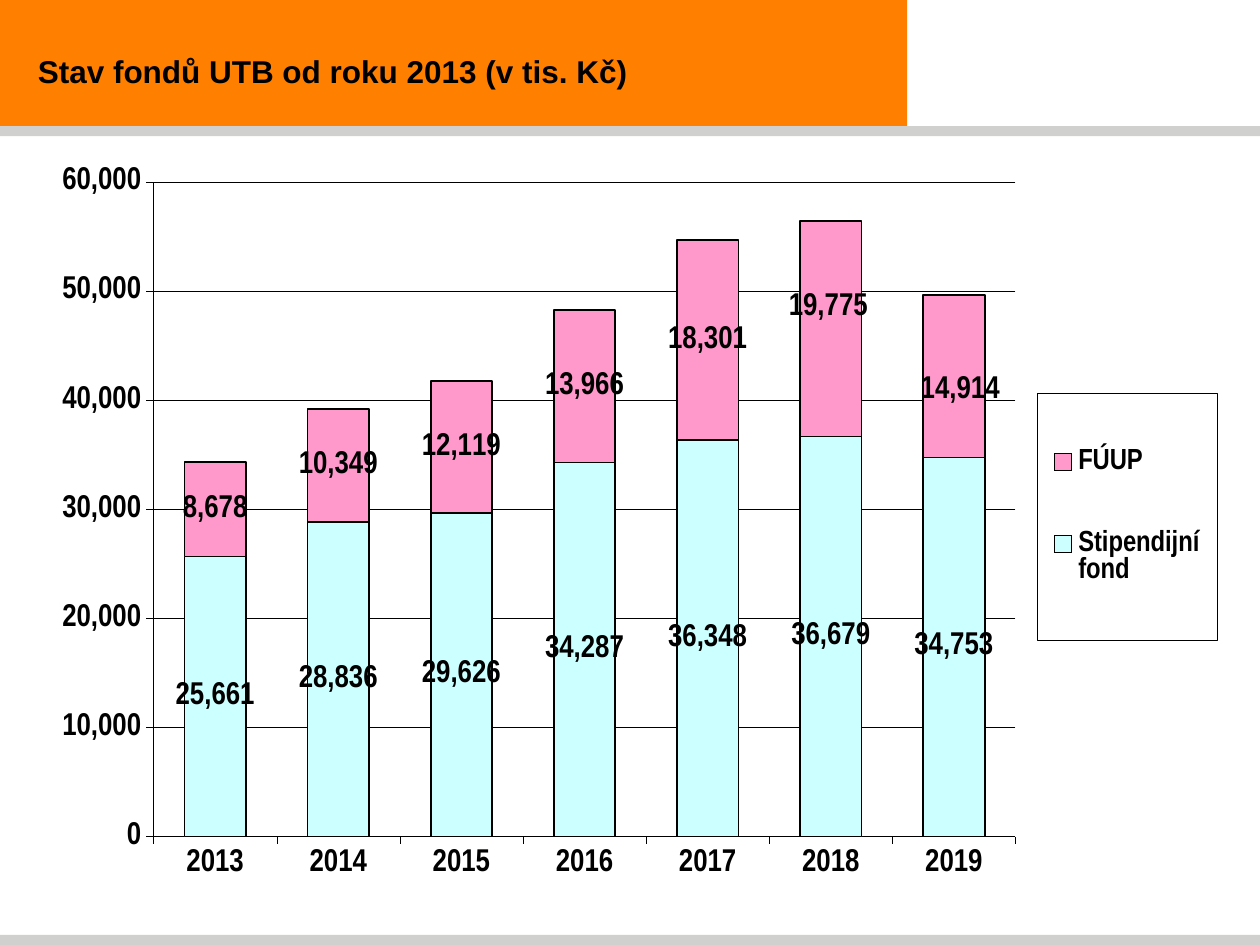
from lxml import etree
from pptx import Presentation
from pptx.chart import data
from pptx.dml import color
from pptx.enum import chart as ch, shapes, text
from pptx.oxml import ns
from pptx.util import Inches, Pt

FACE = {"name": "Arial Narrow", "size": Pt(18), "bold": True}
YEARS = [str(year) for year in range(2013, 2020)]
FUNDS = [
    ("Stipendijní fond", "CCFFFF",
     (25661, 28836, 29626, 34287, 36348, 36679, 34753)),
    ("FÚUP", "FF99CC",
     (8678, 10349, 12119, 13966, 18301, 19775, 14914)),
]
SHIFTS = {5: (-0.02, -0.17), 6: (0.05, 0.12)}


def put(obj, vals):
    """Set each named value on an object."""
    for key, val in vals.items():
        setattr(obj, key, val)


def paint(part, tone):
    """Give a fill, line or font its solid colour."""
    if hasattr(part, "solid"):
        part.solid()
        part.fore_color.rgb = color.RGBColor.from_string(tone)
    else:
        part.color.rgb = color.RGBColor.from_string(tone)


def style(font, **more):
    """Apply the chart face in black."""
    put(font, {**FACE, **more})
    paint(font, "000000")


def stroke(line, width):
    """Draw a black line of a width in points."""
    paint(line, "000000")
    line.width = Pt(width)


def node(root, tag, **attrs):
    """Add a chart element below a root."""
    return etree.SubElement(root, ns.qn("c:" + tag), attrs)


def arrange(host, spot, modes, vals):
    """Insert a manual layout as the child at a given spot."""
    for old in host.findall(ns.qn("c:layout")):
        host.remove(old)
    lay = etree.Element(ns.qn("c:layout"))
    man = node(lay, "manualLayout")
    for tag, val in modes + list(zip("xywh", vals)):
        node(man, tag, val=str(val))
    host.insert(spot, lay)


def share(box, part):
    """Turn a slide box into fractions of an outer box."""
    left, top, wide, high = box
    return ((part[0] - left) / wide, (part[1] - top) / high,
            part[2] / wide, part[3] / high)


def add_band(slide, box, tone):
    """Add a plain coloured band."""
    band = slide.shapes.add_shape(
        shapes.MSO_SHAPE.RECTANGLE, *map(Inches, box))
    band.shadow.inherit = False
    paint(band.fill, tone)
    band.line.fill.background()


def add_head(slide, box):
    """Place the title over the bands."""
    title = slide.shapes.title
    put(title, dict(zip(("left", "top", "width", "height"), map(Inches, box))))
    frame = title.text_frame
    frame.text = "Stav fondů UTB od roku 2013 (v tis. Kč)"
    put(frame, {"margin_left": Inches(0.3), "word_wrap": True,
                "auto_size": text.MSO_AUTO_SIZE.NONE,
                "vertical_anchor": text.MSO_ANCHOR.MIDDLE})
    para = frame.paragraphs[0]
    para.alignment = text.PP_ALIGN.LEFT
    style(para.runs[0].font, name="Arial")
    slide.shapes._spTree.append(title._element)


def set_axes(chart):
    """Format both axes and the grid."""
    for axis in (chart.category_axis, chart.value_axis):
        put(axis, {"major_tick_mark": ch.XL_TICK_MARK.OUTSIDE,
                   "minor_tick_mark": ch.XL_TICK_MARK.NONE})
        style(axis.tick_labels.font)
        stroke(axis.format.line, 0.25)
    chart.category_axis.tick_label_position = ch.XL_TICK_LABEL_POSITION.LOW
    put(axis, {"minimum_scale": 0, "maximum_scale": 60000,
               "major_unit": 10000, "has_major_gridlines": True})
    put(axis.tick_labels, {"number_format": "#,##0",
                           "number_format_is_linked": False})
    stroke(axis.major_gridlines.format.line, 0.25)


def set_bars(chart, box):
    """Colour and label the stacked bars."""
    plot = chart.plots[0]
    put(plot, {"gap_width": 100, "overlap": 100, "vary_by_categories": False})
    for bars, (_, tone, _) in zip(plot.series, FUNDS):
        paint(bars.format.fill, tone)
        stroke(bars.format.line, 1)
        labels = bars.data_labels
        put(labels, {"show_value": True, "number_format": "#,##0",
                     "number_format_is_linked": False})
        style(labels.font)
    for idx, (right, down) in SHIFTS.items():
        style(bars.points[idx].data_label.font)
        label = bars._element.xpath(f"c:dLbls/c:dLbl[c:idx/@val='{idx}']")[0]
        arrange(label, 1, [], (right / box[2], down / box[3]))


def set_legend(chart, box, edges):
    """Place the framed legend."""
    chart.has_legend = True
    legend = chart.legend
    put(legend, {"position": ch.XL_LEGEND_POSITION.RIGHT,
                 "include_in_layout": False})
    style(legend.font, size=Pt(16.6))
    root = legend._element
    arrange(root, 1, edges, share(box, (8.23, 3.12, 1.43, 1.96)))
    frame = etree.Element(ns.qn("c:spPr"))
    line = etree.SubElement(frame, ns.qn("a:ln"), w=str(Pt(0.25)))
    fill = etree.SubElement(line, ns.qn("a:solidFill"))
    etree.SubElement(fill, ns.qn("a:srgbClr"), val="000000")
    root.find(ns.qn("c:txPr")).addprevious(frame)


def add_funds(slide, box):
    """Add the stacked chart of fund balances."""
    table = data.CategoryChartData(number_format="#,##0")
    table.categories = YEARS
    for name, _, vals in FUNDS:
        table.add_series(name, vals)
    chart = slide.shapes.add_chart(
        ch.XL_CHART_TYPE.COLUMN_STACKED, *map(Inches, box), table).chart
    chart.has_title = False
    style(chart.font)
    set_axes(chart)
    set_bars(chart, box)
    edges = [("xMode", "edge"), ("yMode", "edge")]
    set_legend(chart, box, edges)
    area = chart._chartSpace.chart.plotArea
    arrange(area, 0, [("layoutTarget", "inner")] + edges,
            share(box, (1.22, 1.44, 6.84, 5.2)))


def main():
    """Build and save the slide."""
    deck = Presentation()
    put(deck, {"slide_width": Inches(10), "slide_height": Inches(7.5)})
    slide = deck.slides.add_slide(deck.slide_layouts[5])
    add_band(slide, (0, 0, 7.2, 1), "FF8001")
    for top in (7.42, 1):
        add_band(slide, (0, top, 10, 0.08), "D0D0CE")
    add_head(slide, (0, 0.11, 7.2, 0.9))
    add_funds(slide, (0.36, 1.33, 9.42, 5.95))
    deck.save("out.pptx")


if __name__ == "__main__":
    main()
